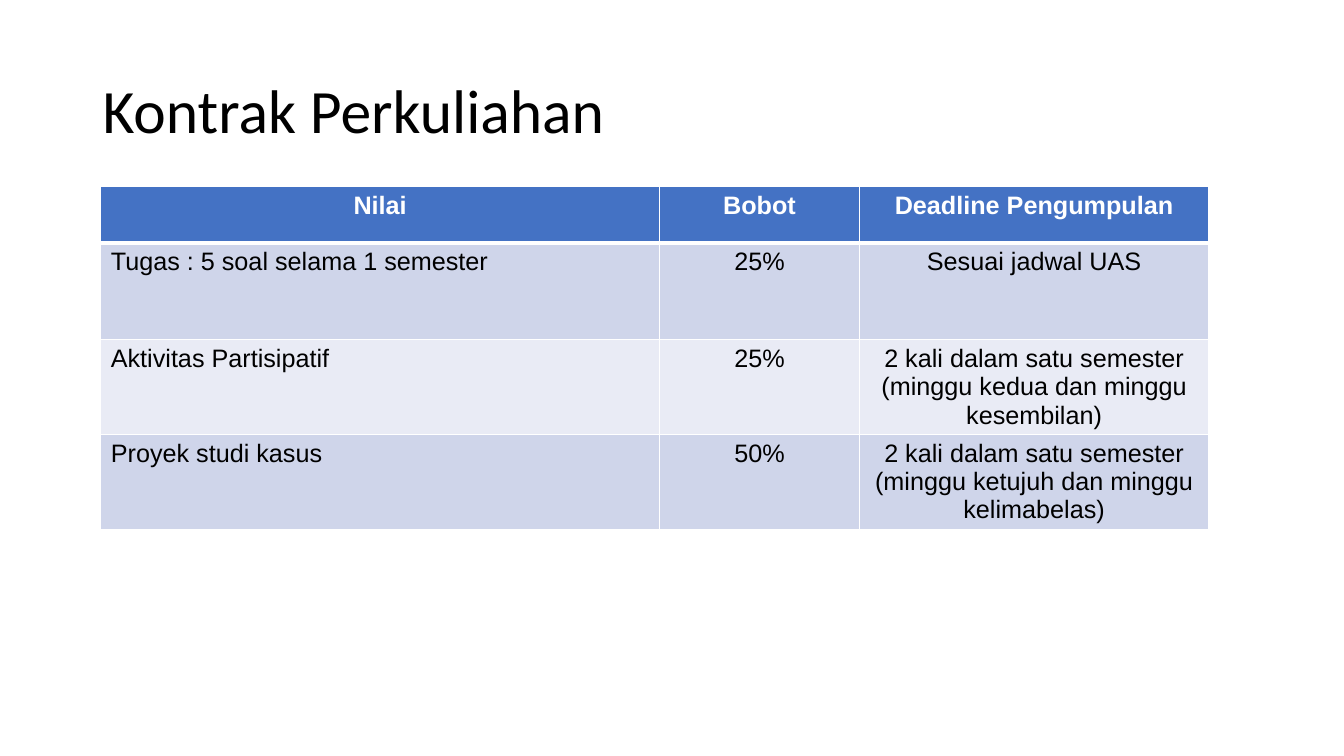
from lxml.etree import SubElement
from pptx import Presentation
from pptx.dml.color import RGBColor
from pptx.enum.text import MSO_ANCHOR, PP_ALIGN
from pptx.oxml.ns import qn
from pptx.util import Cm, Pt

TITLE = "Kontrak Perkuliahan"
GRADING = [
    ("Nilai", "Bobot", "Deadline Pengumpulan"),
    ("Tugas : 5 soal selama 1 semester", "25%", "Sesuai jadwal UAS"),
    ("Aktivitas Partisipatif", "25%",
     "2 kali dalam satu semester (minggu kedua dan minggu kesembilan)"),
    ("Proyek studi kasus", "50%",
     "2 kali dalam satu semester (minggu ketujuh dan minggu kelimabelas)"),
]
COLUMN_WIDTHS = (14.08, 5.04, 8.8)
ROW_HEIGHTS = (1.42, 2.44, 2.38, 2.38)

BLACK = RGBColor(0x00, 0x00, 0x00)
WHITE = RGBColor(0xFF, 0xFF, 0xFF)
HEADER_BLUE = RGBColor(0x44, 0x72, 0xC4)
BANDS = (RGBColor(0xE9, 0xEB, 0xF5), RGBColor(0xCF, 0xD5, 0xEA))


def add_borders(cell, color, top, bottom):
    properties = cell._tc.get_or_add_tcPr()
    for side, width in (("L", 1), ("R", 1), ("T", top), ("B", bottom)):
        line = SubElement(properties, qn(f"a:ln{side}"), w=str(Pt(width)))
        fill = SubElement(line, qn("a:solidFill"))
        SubElement(fill, qn("a:srgbClr"), val=str(color))


def format_cell(cell, text, row, column):
    header = row == 0
    add_borders(cell, WHITE, 3 if row == 1 else 1, 3 if header else 1)
    cell.fill.solid()
    cell.fill.fore_color.rgb = HEADER_BLUE if header else BANDS[row % 2]
    cell.text_frame.text = text
    paragraph = cell.text_frame.paragraphs[0]
    centered = header or column > 0
    paragraph.alignment = PP_ALIGN.CENTER if centered else PP_ALIGN.LEFT
    font = paragraph.runs[0].font
    font.name = "Arial"
    font.size = Pt(18)
    font.bold = header
    font.color.rgb = WHITE if header else BLACK


def add_title(slide):
    title = slide.shapes.title
    title.left, title.top = Cm(2.33), Cm(1.01)
    title.width, title.height = Cm(29.21), Cm(3.68)
    title.text_frame.text = TITLE
    title.text_frame.vertical_anchor = MSO_ANCHOR.MIDDLE
    paragraph = title.text_frame.paragraphs[0]
    paragraph.alignment = PP_ALIGN.LEFT
    paragraph.line_spacing = 0.9
    font = paragraph.runs[0].font
    font.name = "Calibri"
    font.size = Pt(44)
    font.color.rgb = BLACK


def add_grading_table(slide):
    table = slide.shapes.add_table(
        len(GRADING), len(COLUMN_WIDTHS), Cm(2.54), Cm(4.7),
        Cm(sum(COLUMN_WIDTHS)), Cm(sum(ROW_HEIGHTS))).table
    for column, width in zip(table.columns, COLUMN_WIDTHS):
        column.width = Cm(width)
    for row, height in zip(table.rows, ROW_HEIGHTS):
        row.height = Cm(height)
    for row, texts in enumerate(GRADING):
        for column, text in enumerate(texts):
            format_cell(table.cell(row, column), text, row, column)


def main():
    presentation = Presentation()
    presentation.slide_width, presentation.slide_height = Cm(33.87), Cm(19.05)
    slide = presentation.slides.add_slide(presentation.slide_layouts[5])
    add_title(slide)
    add_grading_table(slide)
    presentation.save("out.pptx")


if __name__ == "__main__":
    main()
